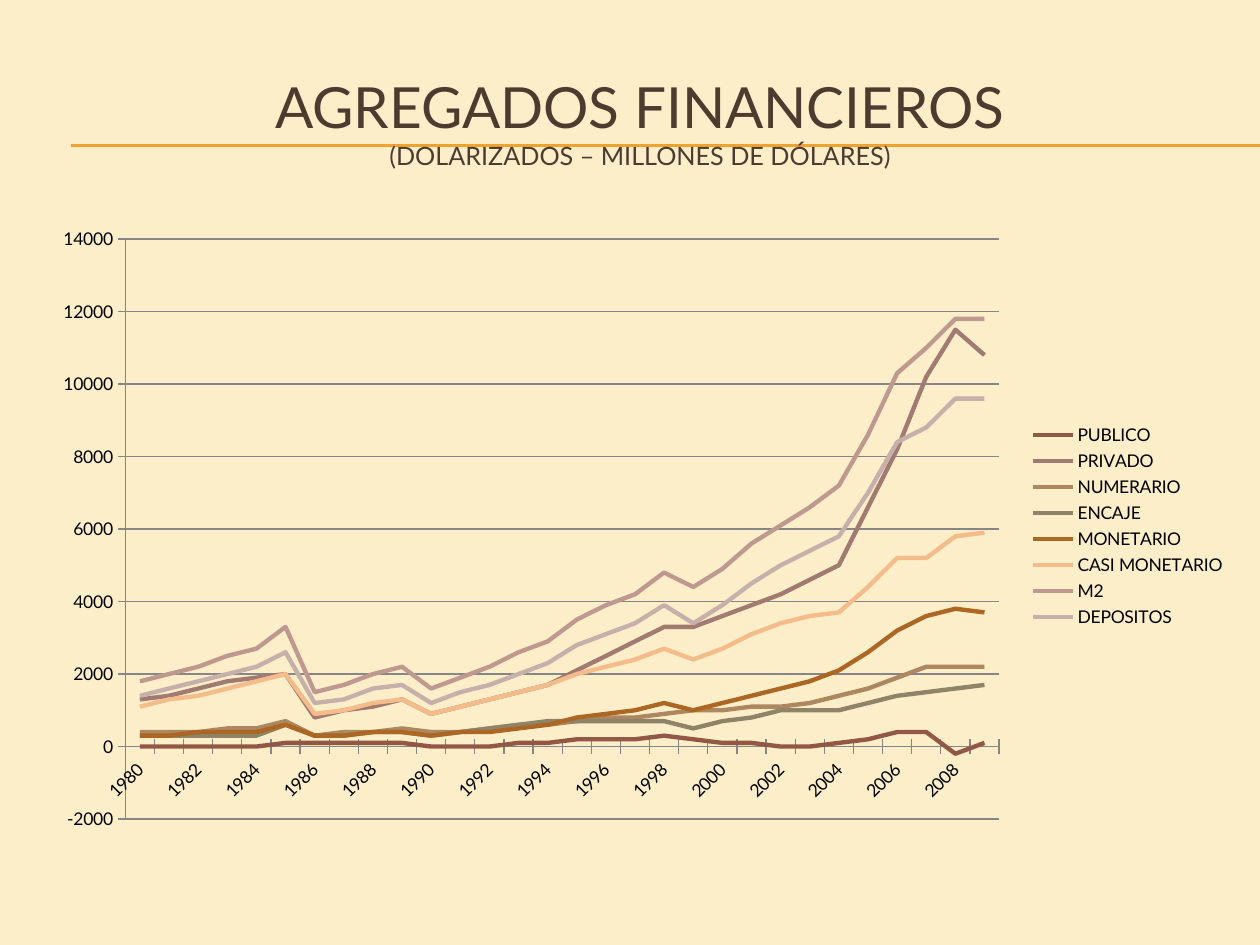
from lxml import etree
from pptx import Presentation
from pptx.chart import data as chart_data
from pptx.dml.color import RGBColor
from pptx.enum import chart as ch, shapes, text
from pptx.oxml import parse_xml
from pptx.oxml.ns import nsdecls, qn
from pptx.util import Inches, Pt

FONT = "Lato"
CREAM = RGBColor.from_string("FBEEC9")
AMBER = RGBColor.from_string("F0A22E")
BROWN = RGBColor.from_string("4E3B30")
BLACK = RGBColor.from_string("000000")
GREY = RGBColor.from_string("868686")
SERIES_COLORS = {name: RGBColor.from_string(code) for name, code in (
    ("PUBLICO", "935845"), ("PRIVADO", "A17B71"), ("NUMERARIO", "AD8760"),
    ("ENCAJE", "8F8467"), ("MONETARIO", "AB6723"), ("CASI MONETARIO", "F3BC8A"),
    ("M2", "BF998F"), ("DEPOSITOS", "C7B0AA"))}

YEARS = range(1980, 2010)
# Turning years, and each aggregate there in hundreds of millions of dollars
TURNS = [1980, 1984, 1985, 1986, 1989, 1990, 1994, 1998, 1999, 2002, 2004, 2006, 2007, 2008, 2009]
AT_TURNS = {
    "PUBLICO": [0, 0, 1, 1, 1, 0, 1, 3, 2, 0, 1, 4, 4, -2, 1],
    "PRIVADO": [13, 19, 20, 8, 13, 9, 17, 33, 33, 42, 50, 82, 102, 115, 108],
    "NUMERARIO": [4, 5, 7, 3, 5, 4, 6, 9, 10, 11, 14, 19, 22, 22, 22],
    "ENCAJE": [3, 3, 6, 3, 4, 3, 7, 7, 5, 10, 10, 14, 15, 16, 17],
    "MONETARIO": [3, 4, 6, 3, 4, 3, 6, 12, 10, 16, 21, 32, 36, 38, 37],
    "CASI MONETARIO": [11, 18, 20, 9, 13, 9, 17, 27, 24, 34, 37, 52, 52, 58, 59],
}


def yearly(at_turns):
    """Fill in the years between turning years along straight lines."""
    values = [at_turns[0] * 100]
    for i in range(1, len(TURNS)):
        span = TURNS[i] - TURNS[i - 1]
        rise = at_turns[i] - at_turns[i - 1]
        values += [100 * round(at_turns[i - 1] + rise * step / span)
                   for step in range(1, span + 1)]
    return values


def add_up(first, second):
    return [a + b for a, b in zip(first, second)]


def build_aggregates():
    aggregates = {name: yearly(values) for name, values in AT_TURNS.items()}
    deposits = add_up(aggregates["MONETARIO"], aggregates["CASI MONETARIO"])
    aggregates["M2"] = add_up(aggregates["NUMERARIO"], deposits)
    aggregates["DEPOSITOS"] = deposits
    return aggregates


def set_all(target, values):
    for key, value in values.items():
        setattr(target, key, value)


def set_line(line, color, width):
    line.color.rgb = color
    line.width = Pt(width)


def add_rule(slide, left, right, tops):
    for top in tops:
        rule = slide.shapes.add_connector(
            shapes.MSO_CONNECTOR.STRAIGHT, Inches(left), Inches(top), Inches(right), Inches(top))
        set_line(rule.line, AMBER, 0.75)
        etree.SubElement(rule._element.spPr, qn("a:effectLst"))


def add_title(slide, left, top, width, height):
    heading = slide.shapes.add_textbox(*map(Inches, (left, top, width, height))).text_frame
    set_all(heading, {"word_wrap": True, "vertical_anchor": text.MSO_ANCHOR.MIDDLE})
    paragraph = heading.paragraphs[0]
    paragraph.alignment = text.PP_ALIGN.CENTER
    title = paragraph.add_run()
    paragraph.add_line_break()
    subtitle = paragraph.add_run()
    for run, words, size in ((title, "AGREGADOS FINANCIEROS", 32.4),
                             (subtitle, "(DOLARIZADOS – MILLONES DE DÓLARES)", 14.4)):
        run.text = words
        set_all(run.font, {"name": FONT, "size": Pt(size)})
        run.font.color.rgb = BROWN


def place_plot(chart, x, y, w, h):
    """Fix the inner plot area, in fractions of the chart."""
    plot_area = chart._chartSpace.chart.plotArea
    for old in plot_area.findall(qn("c:layout")):
        plot_area.remove(old)
    sizes = "".join(f'<c:{tag} val="{value}"/>'
                    for tag, value in (("x", x), ("y", y), ("w", w), ("h", h)))
    plot_area.insert(0, parse_xml(
        f'<c:layout {nsdecls("c")}><c:manualLayout><c:layoutTarget val="inner"/>'
        f'<c:xMode val="edge"/><c:yMode val="edge"/>{sizes}</c:manualLayout></c:layout>'))


def add_aggregates_chart(slide, left, top, width, height):
    table = chart_data.CategoryChartData(number_format="0")
    table.categories = [str(year) for year in YEARS]
    for name, values in build_aggregates().items():
        table.add_series(name, values)
    chart = slide.shapes.add_chart(
        ch.XL_CHART_TYPE.LINE, *map(Inches, (left, top, width, height)), table).chart
    set_all(chart, {"has_title": False, "has_legend": True})
    set_all(chart.font, {"name": FONT, "size": Pt(10)})
    chart.font.color.rgb = BLACK
    set_all(chart.legend, {"position": ch.XL_LEGEND_POSITION.RIGHT, "include_in_layout": False})
    place_plot(chart, 0.07, 0.04, 0.73, 0.93)

    # Series lines
    chart.plots[0].vary_by_categories = False
    for series in chart.plots[0].series:
        series.smooth = False
        series.marker.style = ch.XL_MARKER_STYLE.NONE
        set_line(series.format.line, SERIES_COLORS[series.name], 2.5)

    # Axes
    years, dollars = chart.category_axis, chart.value_axis
    set_all(dollars, {"minimum_scale": -2000, "maximum_scale": 14000, "major_unit": 2000,
                      "has_major_gridlines": True})
    set_line(dollars.major_gridlines.format.line, GREY, 0.75)
    set_all(dollars.tick_labels, {"number_format": "0", "number_format_is_linked": False})
    for axis in (years, dollars):
        axis.major_tick_mark = ch.XL_TICK_MARK.CROSS
        set_line(axis.format.line, GREY, 0.75)
    set_all(years.tick_labels.font, {"name": FONT, "size": Pt(10)})
    years._element.txPr.find(qn("a:bodyPr")).set("rot", "-2700000")
    skip = parse_xml(f'<c:tickLblSkip {nsdecls("c")} val="2"/>')
    years._element.find(qn("c:noMultiLvlLbl")).addprevious(skip)


def main():
    deck = Presentation()
    set_all(deck, {"slide_width": Inches(10), "slide_height": Inches(7.5)})
    slide = deck.slides.add_slide(deck.slide_layouts[6])
    slide.background.fill.solid()
    slide.background.fill.fore_color.rgb = CREAM
    add_rule(slide, 0.56, 10, (1.15, 1.16))
    add_title(slide, 0.33, 0.5, 9.5, 0.92)
    add_aggregates_chart(slide, 0.33, 1.7, 9.5, 4.95)
    deck.save("out.pptx")


if __name__ == "__main__":
    main()
